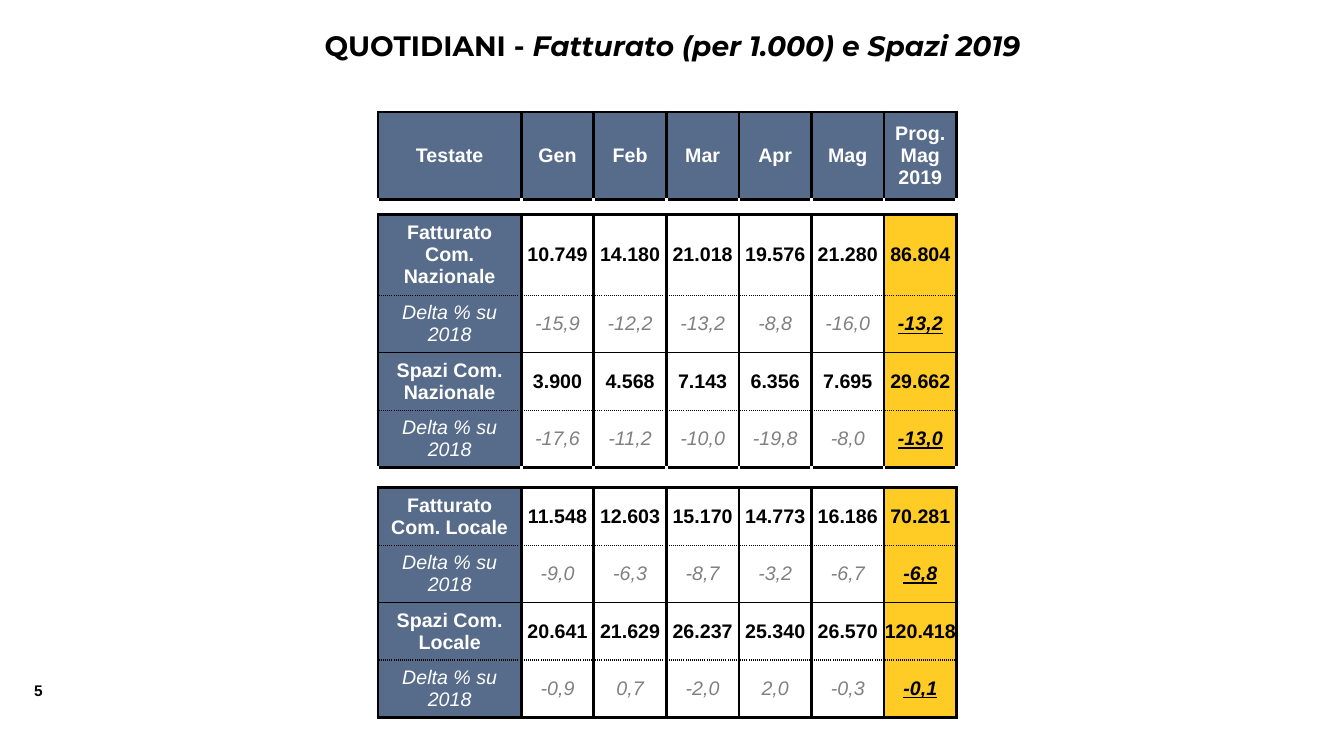
from lxml import etree
from pptx import Presentation
from pptx.dml.color import RGBColor
from pptx.enum import text
from pptx.oxml import ns
from pptx.util import Inches, Pt

COLORS = {"slate": "576B8A", "gold": "FFCB25", "white": "FFFFFF",
          "black": "000000", "gray": "808080"}

COLUMN_WIDTHS = [1.42] + [0.72] * 6
HEADER = ["Testate", "Gen", "Feb", "Mar", "Apr", "Mag", "Prog.\vMag\n2019"]
HEADER_HEIGHT = 0.87
DELTA = "Delta % su 2018"

# Each block: height of the gap above it, then its rows with their heights
BLOCKS = [
    (0.15, [
        (0.79, ["Fatturato Com. Nazionale", "10.749", "14.180", "21.018",
                "19.576", "21.280", "86.804"]),
        (0.57, [DELTA, "-15,9", "-12,2", "-13,2", "-8,8", "-16,0", "-13,2"]),
        (0.57, ["Spazi Com. Nazionale", "3.900", "4.568", "7.143", "6.356",
                "7.695", "29.662"]),
        (0.57, [DELTA, "-17,6", "-11,2", "-10,0", "-19,8", "-8,0", "-13,0"]),
    ]),
    (0.2, [
        (0.57, ["Fatturato Com. Locale", "11.548", "12.603", "15.170",
                "14.773", "16.186", "70.281"]),
        (0.57, [DELTA, "-9,0", "-6,3", "-8,7", "-3,2", "-6,7", "-6,8"]),
        (0.57, ["Spazi Com. Locale", "20.641", "21.629", "26.237", "25.340",
                "26.570", "120.418"]),
        (0.57, [DELTA, "-0,9", "0,7", "-2,0", "2,0", "-0,3", "-0,1"]),
    ]),
]

# Cell borders: colour, width in points, dash
THICK = ("black", 2.25, "solid")
THIN = ("black", 1, "solid")
DOTTED = ("black", 1, "sysDot")
HIDDEN = ("white", 2.25, "solid")


def write(paragraph, words, size=14, font="Arial", color="black", bold=True,
          italic=False, underline=False, align=text.PP_ALIGN.CENTER):
    """Append words to a paragraph; a vertical tab makes a line break."""
    paragraph.alignment = align
    for index, line in enumerate(words.split("\v")):
        if index:
            paragraph.add_line_break()
        run = paragraph.add_run()
        run.text = line
        run.font.size = Pt(size)
        run.font.name = font
        run.font.bold = bold
        run.font.italic = italic
        run.font.underline = underline
        run.font.color.rgb = RGBColor.from_string(COLORS[color])


def add_box(slide, left, top, width, height, wrap=True):
    frame = slide.shapes.add_textbox(Inches(left), Inches(top), Inches(width),
                                     Inches(height)).text_frame
    frame.word_wrap = wrap
    return frame.paragraphs[0]


def set_borders(cell, sides, top, bottom):
    properties = cell._tc.get_or_add_tcPr()
    for tag, (color, width, dash) in zip(("a:lnL", "a:lnR", "a:lnT", "a:lnB"),
                                         (sides, sides, top, bottom)):
        line = etree.SubElement(properties, ns.qn(tag), w=str(Pt(width)))
        fill = etree.SubElement(line, ns.qn("a:solidFill"))
        etree.SubElement(fill, ns.qn("a:srgbClr"), val=COLORS[color])
        etree.SubElement(line, ns.qn("a:prstDash"), val=dash)


def set_fill(cell, color):
    cell.fill.solid()
    cell.fill.fore_color.rgb = RGBColor.from_string(COLORS[color])


def set_margins(cell, across, down):
    cell.margin_left = cell.margin_right = Inches(across)
    cell.margin_top = cell.margin_bottom = Inches(down)


def fill_cell(cell, words, fill, roomy, top, bottom, **style):
    cell.vertical_anchor = text.MSO_ANCHOR.MIDDLE
    set_margins(cell, *((0.1, 0.05) if roomy else (0, 0)))
    set_borders(cell, THICK, top, bottom)
    set_fill(cell, fill)
    frame = cell.text_frame
    for index, line in enumerate(words.split("\n")):
        paragraph = frame.add_paragraph() if index else frame.paragraphs[0]
        write(paragraph, line, **style)


def fill_gap(row):
    for cell in row.cells:
        set_margins(cell, 0, 0)
        set_borders(cell, HIDDEN, THICK, THICK)
        set_fill(cell, "white")
        # Small type keeps the empty row low
        etree.SubElement(cell.text_frame.paragraphs[0]._p,
                         ns.qn("a:endParaRPr"), sz="100")


def fill_data(row, values, top, bottom):
    is_delta = values[0] == DELTA
    last = len(values) - 1
    for column, (cell, value) in enumerate(zip(row.cells, values)):
        if column == 0:
            fill, color = "slate", "white"
        elif column == last:
            fill, color = "gold", "black"
        else:
            fill, color = "white", "gray" if is_delta else "black"
        fill_cell(cell, value, fill, column == 0, top, bottom, color=color,
                  bold=not is_delta or column == last, italic=is_delta,
                  underline=is_delta and column == last)


def add_results(slide):
    heights = [HEADER_HEIGHT]
    for gap, lines in BLOCKS:
        heights += [gap] + [height for height, _ in lines]
    table = slide.shapes.add_table(
        len(heights), len(COLUMN_WIDTHS), Inches(3.75), Inches(1.11),
        Inches(sum(COLUMN_WIDTHS)), Inches(sum(heights))).table
    table.horz_banding = False
    for column, width in zip(table.columns, COLUMN_WIDTHS):
        column.width = Inches(width)
    for row, height in zip(table.rows, heights):
        row.height = Inches(height)

    rows = iter(table.rows)
    for cell, label in zip(next(rows).cells, HEADER):
        fill_cell(cell, label, "slate", True, THICK, THICK, color="white")
    edges = [THICK, DOTTED, THIN, DOTTED, THICK]
    for _, lines in BLOCKS:
        fill_gap(next(rows))
        for (_, values), top, bottom in zip(lines, edges, edges[1:]):
            fill_data(next(rows), values, top, bottom)


def main():
    deck = Presentation()
    deck.slide_width, deck.slide_height = Inches(13.33), Inches(7.5)
    slide = deck.slides.add_slide(deck.slide_layouts[6])

    # Page number
    page = add_box(slide, 0.24, 6.71, 0.42, 0.29, wrap=False)
    write(page, "5", size=11, align=text.PP_ALIGN.LEFT)

    # Title
    title = add_box(slide, 1.67, 0.23, 10, 0.44)
    write(title, "QUOTIDIANI - ", size=20, font="Montserrat")
    write(title, "Fatturato (per 1.000) e Spazi 2019", size=20,
          font="Montserrat", italic=True)

    # Monthly results
    add_results(slide)
    deck.save("out.pptx")


if __name__ == "__main__":
    main()
